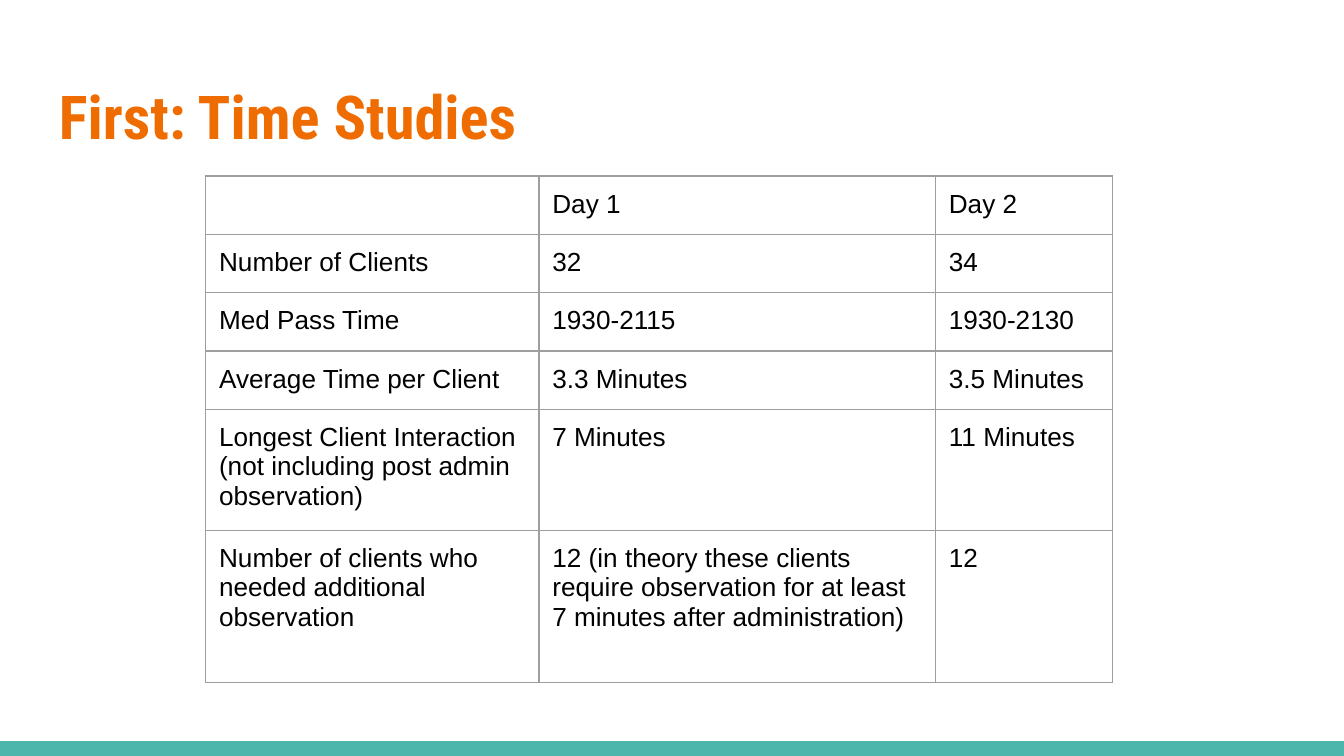
"""Build the time studies slide with its two-day comparison table."""
import lxml.etree
import pptx
import pptx.dml.color
import pptx.enum.shapes
import pptx.enum.text
import pptx.oxml.ns
import pptx.util

Inches = pptx.util.Inches
Pt = pptx.util.Pt
qn = pptx.oxml.ns.qn

HEADING = "First: Time Studies"
STUDIES = [
    ("", "Day 1", "Day 2"),
    ("Number of Clients", "32", "34"),
    ("Med Pass Time", "1930-2115", "1930-2130"),
    ("Average Time per Client", "3.3 Minutes", "3.5 Minutes"),
    ("Longest Client Interaction (not including post admin observation)",
     "7 Minutes", "11 Minutes"),
    ("Number of clients who needed additional observation",
     "12 (in theory these clients require observation for at least "
     "7 minutes after administration)", "12"),
]
COLUMN_WIDTHS = [2.48, 2.95, 1.32]
ROW_HEIGHTS = [0.43] * 4 + [0.9, 1.13]
TEAL, ORANGE, BLACK, GRAY = "4DB6AC", "EF6C00", "000000", "9E9E9E"
SLIDE_WIDTH = Inches(10)
SLIDE_HEIGHT = SLIDE_WIDTH * 9 // 16
PADDING = Inches(0.1)
CELL_SIZE = Pt(14)


def color(value):
    return pptx.dml.color.RGBColor.from_string(value)


def style_font(font, name, size, shade, bold=False):
    font.name, font.size, font.bold = name, size, bold
    font.color.rgb = color(shade)


def pad(part):
    part.margin_left = part.margin_right = PADDING
    part.margin_top = part.margin_bottom = PADDING


def add_borders(cell):
    properties = cell._tc.get_or_add_tcPr()
    for side in ("a:lnL", "a:lnR", "a:lnT", "a:lnB"):
        line = lxml.etree.SubElement(properties, qn(side), w=str(Pt(0.75)))
        fill = lxml.etree.SubElement(line, qn("a:solidFill"))
        lxml.etree.SubElement(fill, qn("a:srgbClr"), val=GRAY)


def add_footer_bar(slide):
    height = Inches(0.11)
    bar = slide.shapes.add_shape(
        pptx.enum.shapes.MSO_SHAPE.RECTANGLE,
        0, SLIDE_HEIGHT - height, SLIDE_WIDTH, height)
    bar.shadow.inherit = False
    bar.fill.solid()
    bar.fill.fore_color.rgb = color(TEAL)
    bar.line.fill.background()


def add_heading(slide):
    heading = slide.shapes.add_textbox(
        Inches(0.34), Inches(0.49), Inches(9.32), Inches(0.77)).text_frame
    heading.word_wrap = True
    heading.vertical_anchor = pptx.enum.text.MSO_ANCHOR.TOP
    pad(heading)
    heading.text = HEADING
    style_font(heading.paragraphs[0].runs[0].font,
               "Roboto Condensed", Pt(32.4), ORANGE, True)


def add_studies(slide):
    studies = slide.shapes.add_table(
        len(STUDIES), len(COLUMN_WIDTHS), Inches(1.53), Inches(1.31),
        Inches(sum(COLUMN_WIDTHS)), Inches(sum(ROW_HEIGHTS))).table
    studies.first_row = studies.horz_banding = False
    for column, width in zip(studies.columns, COLUMN_WIDTHS):
        column.width = Inches(width)
    for row, height, entries in zip(studies.rows, ROW_HEIGHTS, STUDIES):
        row.height = Inches(height)
        for cell, entry in zip(row.cells, entries):
            pad(cell)
            add_borders(cell)
            cell.fill.background()
            cell.text = entry
            paragraph = cell.text_frame.paragraphs[0]
            for run in paragraph.runs:
                style_font(run.font, "Arial", CELL_SIZE, BLACK)
            if not entry:
                lxml.etree.SubElement(paragraph._p, qn("a:endParaRPr"),
                                      sz=str(int(CELL_SIZE.pt * 100)))


def main():
    deck = pptx.Presentation()
    deck.slide_width, deck.slide_height = SLIDE_WIDTH, SLIDE_HEIGHT
    slide = deck.slides.add_slide(deck.slide_layouts[6])
    add_footer_bar(slide)
    add_heading(slide)
    add_studies(slide)
    deck.save("out.pptx")


if __name__ == "__main__":
    main()
